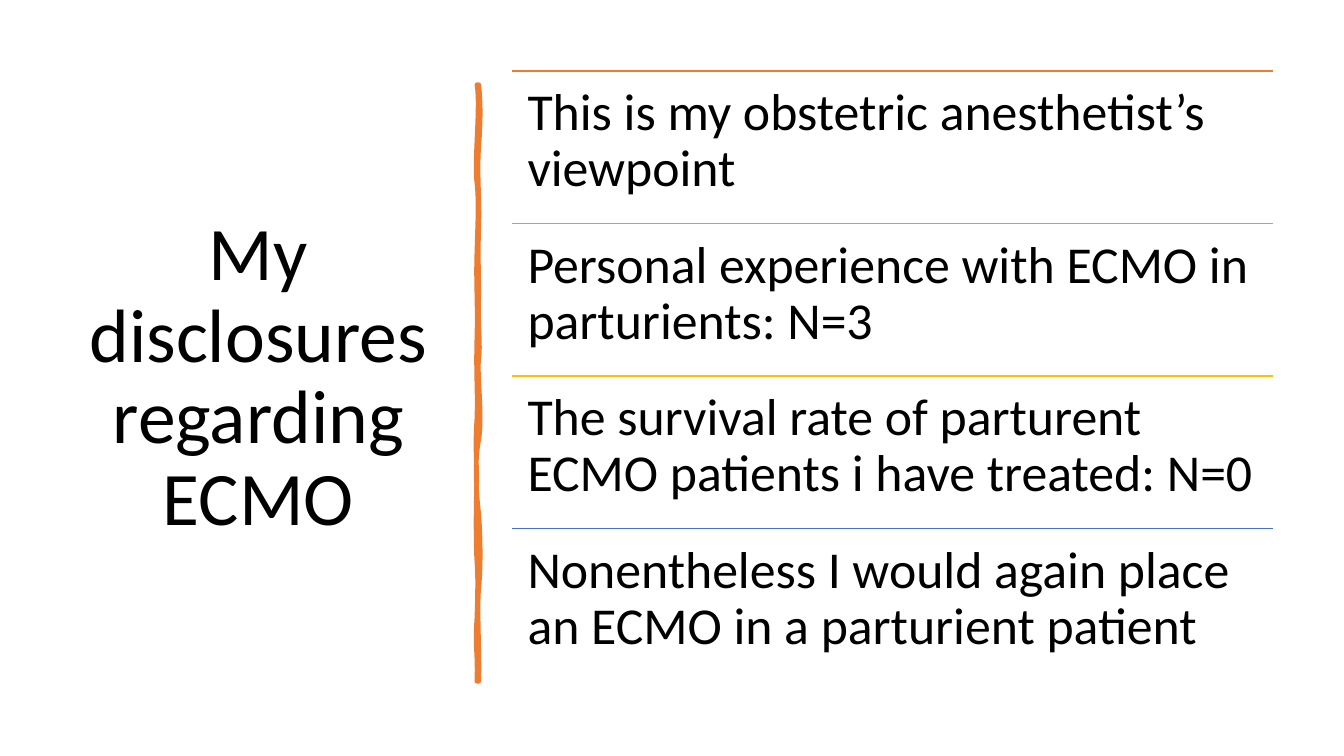
from dataclasses import dataclass

from lxml import etree
from pptx import Presentation
from pptx.dml.color import RGBColor
from pptx.enum.shapes import MSO_CONNECTOR
from pptx.enum.text import MSO_ANCHOR, PP_ALIGN
from pptx.oxml.ns import qn
from pptx.util import Pt

STRAIGHT = MSO_CONNECTOR.STRAIGHT
TOP, MIDDLE = MSO_ANCHOR.TOP, MSO_ANCHOR.MIDDLE
LEFT, CENTER = PP_ALIGN.LEFT, PP_ALIGN.CENTER

COLORS = {
    "text": "000000",
    "orange": "ED7D31",
    "gray": "A5A5A5",
    "gold": "FFC000",
    "blue": "4472C4",
}

# Statement rows
ROW_X, ROW_Y, ROW_W, ROW_H = 366, 50.6, 543.6, 108.95

# Divider brush stroke: (control 1, control 2, end) per curve
STROKE_START = (342, 60.5)
RIGHT_EDGE = [
    ((343.4, 73.4), (343.4, 85.7), (342, 105.1)),
    ((340.6, 124.6), (342.7, 140.4), (342, 162.7)),
    ((341.3, 185), (342, 188.6), (342, 211.7)),
    ((341.3, 234), (343.4, 246.2), (342, 256.3)),
    ((340.6, 266.4), (344.9, 298.1), (342, 313.9)),
    ((339.1, 329), (339.8, 348.5), (342, 367.2)),
    ((343.4, 385.9), (343.4, 406.1), (342, 420.5)),
    ((340.6, 434.2), (342.7, 468), (342, 486.7)),
]
LEFT_EDGE = [
    ((341.3, 486.7), (340.6, 486.7), (340.6, 486.7)),
    ((341.3, 465.1), (339.1, 463.7), (340.6, 441.4)),
    ((341.3, 419.8), (341.3, 410.4), (340.6, 401)),
    ((339.8, 391.7), (339.8, 356.4), (340.6, 343.4)),
    ((340.6, 330.5), (339.1, 320.4), (340.6, 298.8)),
    ((341.3, 277.9), (339.8, 268.6), (340.6, 241.2)),
    ((341.3, 214.6), (339.8, 202.3), (340.6, 180)),
    ((341.3, 157), (342, 144), (340.6, 130.3)),
    ((338.4, 117.4), (343.4, 74.9), (340.6, 60.5)),
]
UNITS_PER_PT = 100


@dataclass
class Statement:
    text: str
    color: str


@dataclass
class TextStyle:
    size: float
    align: PP_ALIGN
    anchor: MSO_ANCHOR
    inset_x: float
    inset_y: float
    after: float


STATEMENTS = [
    Statement("This is my obstetric anesthetist’s viewpoint", "orange"),
    Statement("Personal experience with ECMO in parturients: N=3", "gray"),
    Statement("The survival rate of parturent ECMO patients i have treated: N=0", "gold"),
    Statement("Nonentheless I would again place an ECMO in a parturient patient", "blue"),
]
TITLE_STYLE = TextStyle(54, CENTER, MIDDLE, 7.2, 3.6, 0)
ROW_STYLE = TextStyle(37, LEFT, TOP, 10.8, 10.8, 13)


def rgb(name: str) -> RGBColor:
    return RGBColor.from_string(COLORS[name])


def set_all(target, values: dict) -> None:
    for name, value in values.items():
        setattr(target, name, value)


def add_text(slide, text: str, box: tuple, style: TextStyle) -> None:
    tf = slide.shapes.add_textbox(*map(Pt, box)).text_frame
    dx, dy = Pt(style.inset_x), Pt(style.inset_y)
    set_all(tf, {"word_wrap": True, "vertical_anchor": style.anchor,
                 "margin_left": dx, "margin_right": dx,
                 "margin_top": dy, "margin_bottom": dy})
    p = tf.paragraphs[0]
    set_all(p, {"alignment": style.align, "line_spacing": 0.9,
                "space_after": Pt(style.after)})
    r = p.add_run()
    r.text = text
    set_all(r.font, {"name": "Calibri", "size": Pt(style.size)})
    r.font.color.rgb = rgb("text")


def add_rule(slide, y: float, color: str) -> None:
    line = slide.shapes.add_connector(
        STRAIGHT, Pt(ROW_X), Pt(y), Pt(ROW_X + ROW_W), Pt(y))
    line.line.color.rgb = rgb(color)
    line.line.width = Pt(1)
    etree.SubElement(line._element.spPr, qn("a:effectLst"))


def to_units(point: tuple) -> tuple:
    return tuple(round(v * UNITS_PER_PT) for v in point)


def bend_segments(sp, curves: list) -> None:
    """Turn each straight segment of a freeform into its cubic curve."""
    ends = [to_units(end) for _, _, end in curves]
    left, top = (min(values) for values in zip(to_units(STROKE_START), *ends))
    segments = list(sp._element.iter(qn("a:lnTo")))
    for segment, curve in zip(segments, curves):
        bend = etree.Element(qn("a:cubicBezTo"))
        for x, y in map(to_units, curve):
            etree.SubElement(bend, qn("a:pt"), x=str(x - left), y=str(y - top))
        segment.getparent().replace(segment, bend)


def add_divider(slide) -> None:
    curves = RIGHT_EDGE + LEFT_EDGE
    builder = slide.shapes.build_freeform(
        *to_units(STROKE_START), scale=Pt(1) / UNITS_PER_PT)
    builder.add_line_segments([to_units(end) for _, _, end in curves], close=True)
    sp = builder.convert_to_shape()
    bend_segments(sp, curves)
    sp.shadow.inherit = False
    sp.fill.solid()
    sp.fill.fore_color.rgb = rgb("orange")
    sp.line.color.rgb = rgb("orange")
    sp.line.width = Pt(3.25)


def main() -> None:
    prs = Presentation()
    set_all(prs, {"slide_width": Pt(960), "slide_height": Pt(540)})
    s = prs.slides.add_slide(prs.slide_layouts[6])

    # Title and divider
    add_text(s, "My disclosures regarding ECMO", (49.9, 50.4, 269.3, 439.9), TITLE_STYLE)
    add_divider(s)

    # Ruled statements
    for i, statement in enumerate(STATEMENTS):
        y = ROW_Y + i * ROW_H
        add_rule(s, y, statement.color)
        add_text(s, statement.text, (ROW_X, y, ROW_W, ROW_H), ROW_STYLE)

    prs.save("out.pptx")


if __name__ == "__main__":
    main()
